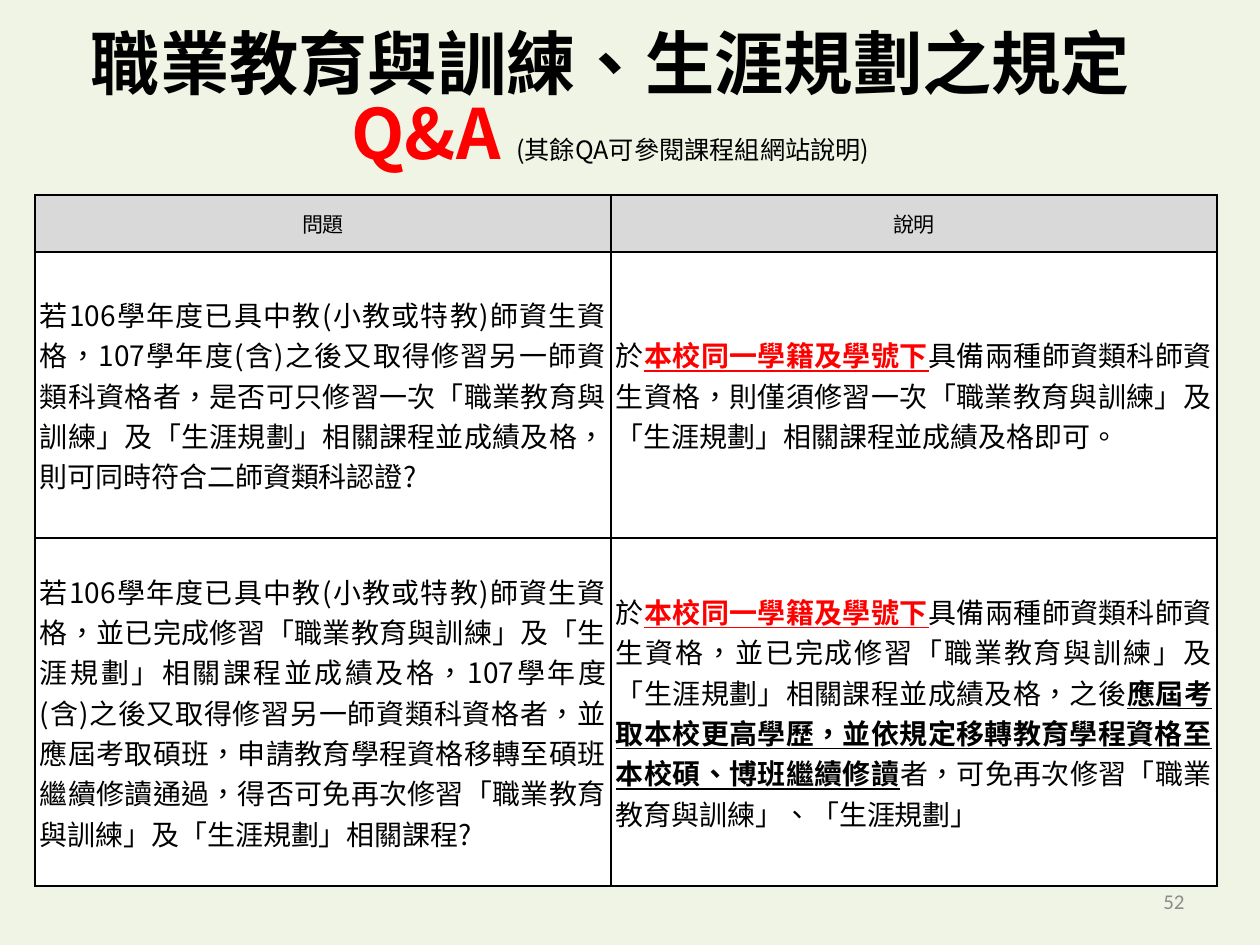
from dataclasses import dataclass
from typing import Optional

from lxml.etree import SubElement
from pptx import Presentation
from pptx.dml.color import RGBColor
from pptx.enum.lang import MSO_LANGUAGE_ID
from pptx.enum.text import MSO_ANCHOR, PP_ALIGN
from pptx.oxml.ns import qn
from pptx.util import Emu, Pt

EMU_PER_PX = 914400 / 126
CJK_FONT = "Noto Sans CJK SC"
BLACK = RGBColor(0x00, 0x00, 0x00)
RED = RGBColor(0xFF, 0x00, 0x00)
WHITE = RGBColor(0xFF, 0xFF, 0xFF)
HEADER_GRAY = RGBColor(0xD9, 0xD9, 0xD9)
NUMBER_GRAY = RGBColor(0x8C, 0x8C, 0x8C)
PALE_GREEN = RGBColor(0xEF, 0xF4, 0xE5)


@dataclass
class Span:
    text: str
    color: Optional[RGBColor] = None
    bold: Optional[bool] = None
    underline: Optional[bool] = None
    size: Optional[float] = None


@dataclass
class TextStyle:
    size: float
    align: PP_ALIGN
    color: RGBColor = BLACK
    font: str = CJK_FONT


@dataclass
class CellStyle:
    text: TextStyle
    fill: RGBColor
    inset: int


TITLE = TextStyle(39.6, PP_ALIGN.CENTER)
PAGE_NUMBER = TextStyle(12, PP_ALIGN.RIGHT, NUMBER_GRAY, "Calibri")
HEADER = CellStyle(TextStyle(12, PP_ALIGN.CENTER), HEADER_GRAY, 6)
BODY = CellStyle(TextStyle(16, PP_ALIGN.JUSTIFY), WHITE, 5)

SAME_STATUS = [
    Span("於"),
    Span("本校同一學籍及學號下", RED, bold=True, underline=True),
]
COLUMN_WIDTHS = [576, 606]
ROW_HEIGHTS = [57, 286, 348]
ROWS = [
    [[Span("問題")], [Span("說明")]],
    [
        [Span("若106學年度已具中教(小教或特教)師資生資格，107學年度(含)之後又取得修習"
              "另一師資類科資格者，是否可只修習一次「職業教育與訓練」及「生涯規劃」"
              "相關課程並成績及格，則可同時符合二師資類科認證?")],
        SAME_STATUS + [
            Span("具備兩種師資類科師資生資格，則僅須修習一次「職業教育與訓練」及"
                 "「生涯規劃」相關課程並成績及格即可。"),
        ],
    ],
    [
        [Span("若106學年度已具中教(小教或特教)師資生資格，並已完成修習「職業教育與訓練」"
              "及「生涯規劃」相關課程並成績及格，107學年度(含)之後又取得修習另一師資類科"
              "資格者，並應屆考取碩班，申請教育學程資格移轉至碩班繼續修讀通過，得否可免"
              "再次修習「職業教育與訓練」及「生涯規劃」相關課程?")],
        SAME_STATUS + [
            Span("具備兩種師資類科師資生資格，並已完成修習「職業教育與訓練」及"
                 "「生涯規劃」相關課程並成績及格，之後"),
            Span("應屆考取本校更高學歷，並依規定移轉教育學程資格至本校碩、博班繼續修讀",
                 bold=True, underline=True),
            Span("者，可免再次修習「職業教育與訓練」、「生涯規劃」"),
        ],
    ],
]


def px(value: int) -> Emu:
    return Emu(round(value * EMU_PER_PX))


def write(paragraph, spans: list[Span], style: TextStyle) -> None:
    paragraph.alignment = style.align
    font = paragraph.font
    font.name = style.font
    font.size = Pt(style.size)
    font.color.rgb = style.color
    font.language_id = MSO_LANGUAGE_ID.TRADITIONAL_CHINESE
    SubElement(font._element, qn("a:ea"), typeface=style.font)
    for span in spans:
        run = paragraph.add_run()
        run.text = span.text
        run.font.bold = span.bold
        run.font.underline = span.underline
        if span.size:
            run.font.size = Pt(span.size)
        if span.color is not None:
            run.font.color.rgb = span.color


def add_text(slide, box: tuple[int, int, int, int], spans: list[Span],
             style: TextStyle):
    shape = slide.shapes.add_textbox(*map(px, box))
    frame = shape.text_frame
    frame.word_wrap = True
    frame.vertical_anchor = MSO_ANCHOR.MIDDLE
    write(frame.paragraphs[0], spans, style)
    return frame.paragraphs[0]


def add_borders(cell) -> None:
    properties = cell._tc.get_or_add_tcPr()
    for index, side in enumerate(("lnL", "lnR", "lnT", "lnB")):
        line = properties.makeelement(qn(f"a:{side}"), {"w": str(Pt(1))})
        fill = SubElement(line, qn("a:solidFill"))
        SubElement(fill, qn("a:srgbClr"), val=str(BLACK))
        properties.insert(index, line)


def fill_cell(cell, spans: list[Span], style: CellStyle) -> None:
    cell.fill.solid()
    cell.fill.fore_color.rgb = style.fill
    cell.vertical_anchor = MSO_ANCHOR.MIDDLE
    cell.margin_left = cell.margin_right = px(style.inset)
    cell.margin_top = cell.margin_bottom = 0
    write(cell.text_frame.paragraphs[0], spans, style.text)
    add_borders(cell)


def add_question_table(slide, left: int, top: int) -> None:
    table = slide.shapes.add_table(
        len(ROW_HEIGHTS), len(COLUMN_WIDTHS), px(left), px(top),
        px(sum(COLUMN_WIDTHS)), px(sum(ROW_HEIGHTS))).table
    table.first_row = table.horz_banding = False
    for column, width in zip(table.columns, COLUMN_WIDTHS):
        column.width = px(width)
    for index, (row, height) in enumerate(zip(table.rows, ROW_HEIGHTS)):
        row.height = px(height)
        for cell, spans in zip(row.cells, ROWS[index]):
            fill_cell(cell, spans, BODY if index else HEADER)


def main() -> None:
    presentation = Presentation()
    presentation.slide_width, presentation.slide_height = px(1260), px(945)
    slide = presentation.slides.add_slide(presentation.slide_layouts[6])
    slide.background.fill.solid()
    slide.background.fill.fore_color.rgb = PALE_GREEN

    # Title, with a closing line break that lifts it above the table
    title = add_text(slide, (25, 55, 1171, 181), [
        Span("職業教育與訓練、生涯規劃之規定 ", bold=True),
        Span("Q&A ", RED, bold=True),
        Span("(其餘QA可參閱課程組網站說明)", size=14.4),
    ], TITLE)
    title.line_spacing = 0.84
    title.add_line_break()

    # Questions and explanations
    add_question_table(slide, 35, 195)

    # Page number
    add_text(slide, (903, 876, 294, 50), [Span("52")], PAGE_NUMBER)

    presentation.save("out.pptx")


if __name__ == "__main__":
    main()
